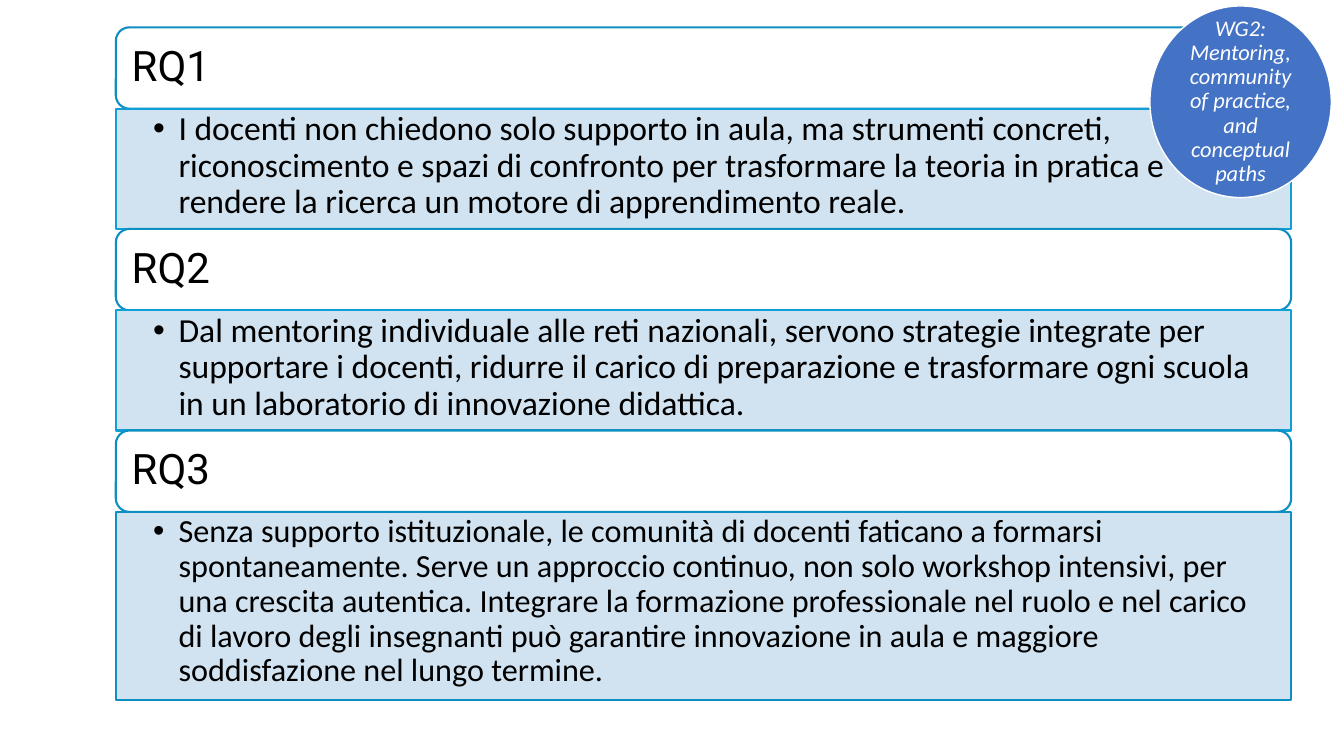
"""Build a slide of three research questions with a round group badge."""
from lxml.etree import SubElement
from pptx import Presentation
from pptx.dml.color import RGBColor as RGB
from pptx.enum.shapes import MSO_SHAPE as Shape
from pptx.enum.text import MSO_ANCHOR as Anchor, PP_ALIGN as Align
from pptx.oxml.ns import qn
from pptx.util import Cm, Pt

HUES = {"white": "FFFFFF", "black": "000000", "pale": "D1E3F1",
        "edge": "0E8FC1", "sky": "0F9ED5", "badge": "4472C4"}
LEFT, TOP, WIDTH = 2.92, 0.69, 29.62
HEAD = 2.05
ROWS = [
    ("RQ1", "I docenti non chiedono solo supporto in aula, ma strumenti concreti, "
     "riconoscimento e spazi di confronto per trasformare la teoria in pratica e "
     "rendere la ricerca un motore di apprendimento reale.", 3.03, 24, "sky"),
    ("RQ2", "Dal mentoring individuale alle reti nazionali, servono strategie "
     "integrate per supportare i docenti, ridurre il carico di preparazione e "
     "trasformare ogni scuola in un laboratorio di innovazione didattica.",
     3.03, 24, "sky"),
    ("RQ3", "Senza supporto istituzionale, le comunità di docenti faticano a formarsi "
     "spontaneamente. Serve un approccio continuo, non solo workshop intensivi, per "
     "una crescita autentica. Integrare la formazione professionale nel ruolo e nel "
     "carico di lavoro degli insegnanti può garantire innovazione in aula e maggiore "
     "soddisfazione nel lungo termine.", 4.75, 23, "edge"),
]


def tint(name):
    """Return the named colour."""
    return RGB.from_string(HUES[name])


def block(slide, kind, box, fill, line, width=1.5):
    """Add a filled and outlined shape in a box given in centimetres."""
    shape = slide.shapes.add_shape(kind, *map(Cm, box))
    shape.shadow.inherit = False
    shape.fill.solid()
    shape.fill.fore_color.rgb = tint(fill)
    shape.line.color.rgb = tint(line)
    shape.line.width = Pt(width)
    return shape


def write(shape, text, size, font="Calibri", hue="black", align=Align.LEFT,
          anchor=Anchor.MIDDLE, pads=(0.08,) * 4, italic=False, dot=False):
    """Write one formatted paragraph into a shape."""
    frame = shape.text_frame
    frame.word_wrap = True
    frame.vertical_anchor = anchor
    (frame.margin_left, frame.margin_top,
     frame.margin_right, frame.margin_bottom) = map(Cm, pads)
    para = frame.paragraphs[0]
    para.alignment = align
    para.line_spacing = 0.9
    if dot:
        para.level = 1
        props = para._p.get_or_add_pPr()
        props.set("marL", str(Cm(0.64)))
        props.set("indent", str(-Cm(0.64)))
        SubElement(props, qn("a:buFont"), typeface="Arial")
        SubElement(props, qn("a:buChar"), char="•")
    run = para.add_run()
    run.text = text
    run.font.name = font
    run.font.size = Pt(size)
    run.font.italic = italic
    run.font.color.rgb = tint(hue)


def panel(slide, box, title, body, size, line):
    """Place a rounded heading over a bulleted answer."""
    left, top, width, height = box
    head = block(slide, Shape.ROUNDED_RECTANGLE, (left, top, width, HEAD),
                 "white", "edge")
    write(head, title, 30, font="Roboto", pads=(0.3,) * 4)
    base = block(slide, Shape.RECTANGLE, (left, top + HEAD, width, height - HEAD),
                 "pale", line)
    write(base, body, size, anchor=Anchor.TOP, pads=(0.94, 0.08, 0.5, 0.08), dot=True)


def badge(slide, box):
    """Place the round badge of the working group."""
    disc = block(slide, Shape.OVAL, box, "badge", "white", 1)
    write(disc, "WG2: Mentoring, community of practice, and conceptual paths", 16,
          hue="white", align=Align.CENTER, italic=True)


def main():
    """Build and save the slide."""
    deck = Presentation()
    deck.slide_width, deck.slide_height = Cm(33.87), Cm(19.05)
    slide = deck.slides.add_slide(deck.slide_layouts[6])
    top = TOP
    for title, body, depth, size, line in ROWS:
        panel(slide, (LEFT, top, WIDTH, HEAD + depth), title, body, size, line)
        top += HEAD + depth
    badge(slide, (28.98, 0.15, 4.57, 4.83))
    deck.save("out.pptx")


if __name__ == "__main__":
    main()
